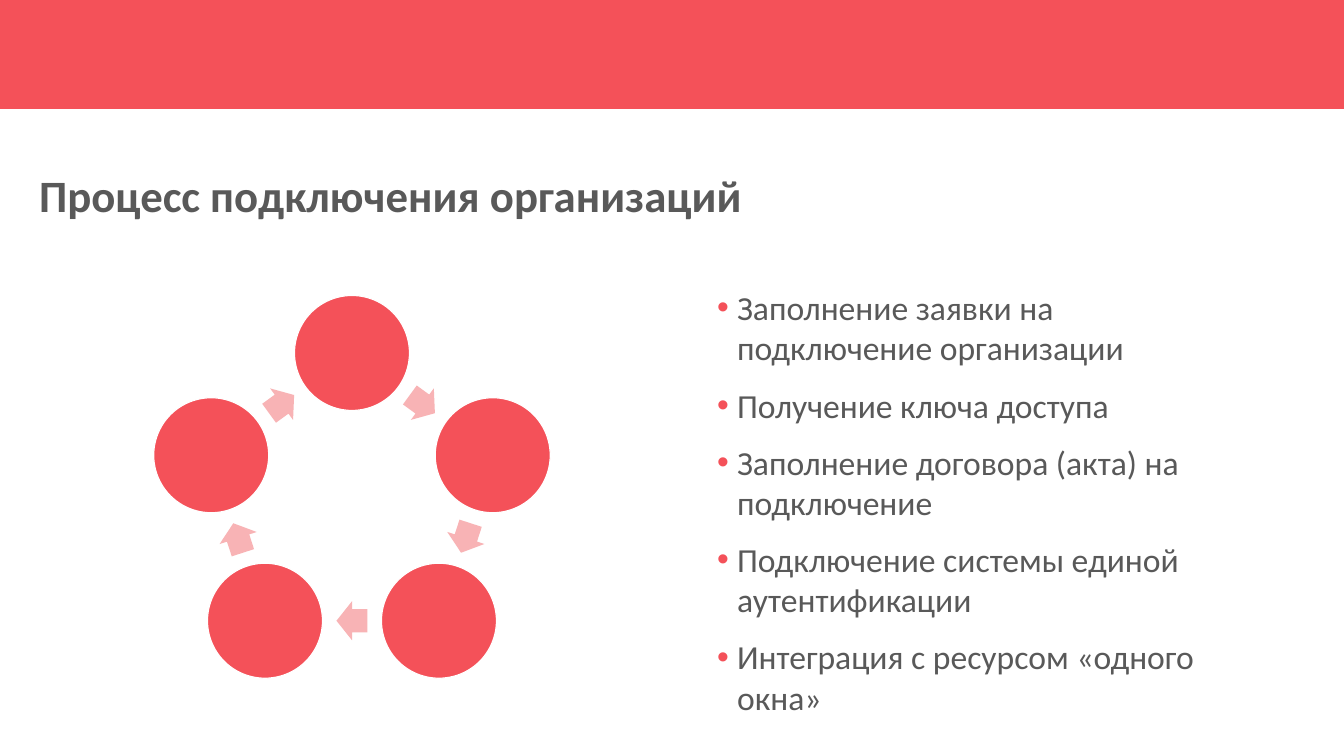
from dataclasses import dataclass
from math import cos, pi, radians, sin

from lxml.etree import SubElement
from pptx import Presentation
from pptx.dml.color import RGBColor
from pptx.enum.shapes import MSO_SHAPE as Preset
from pptx.enum.text import MSO_ANCHOR as Anchor, MSO_AUTO_SIZE as AutoSize, PP_ALIGN as Align
from pptx.oxml.ns import qn
from pptx.util import Pt

# Content
TITLE = "Процесс подключения организаций"
STEPS = [
    "Заполнение заявки на подключение организации",
    "Получение ключа доступа",
    "Заполнение договора (акта) на подключение",
    "Подключение системы единой аутентификации",
    "Интеграция с ресурсом «одного окна»",
]

# Geometry in px: left, top, width, height
SLIDE_SIZE = (1344, 756)
BAND_BOX = (0, 0, 1344, 109)
TITLE_BOX = (29, 148, 1213, 100)
STEPS_BOX = (707, 248, 534, 508)
BULLET_INDENT = 20
RING_CENTER = (352, 501)
RING_RADIUS = 148
CIRCLE_SIZE = (115, 115)
ARROW_SIZE = (31, 39)


@dataclass(frozen=True)
class Theme:
    accent: str = "F45159"
    arrow: str = "F8B3B5"
    text: str = "595959"
    outline: str = "FFFFFF"
    font: str = "Calibri"
    title_size: int = 32
    body_size: int = 24
    paragraph_gap: int = 12
    outline_width: float = 0.85


THEME = Theme()


def px(length):
    return round(length * 914400 / 100.8)


def place(shape, box):
    shape.left, shape.top, shape.width, shape.height = map(px, box)


def prepare_text(placeholder, box):
    place(placeholder, box)
    frame = placeholder.text_frame
    frame.word_wrap = True
    frame.auto_size = AutoSize.NONE
    frame.vertical_anchor = Anchor.MIDDLE
    return frame


def add_text(paragraph, text, size, bold=False):
    paragraph.alignment = Align.LEFT
    run = paragraph.add_run()
    run.text = text
    font = run.font
    font.name, font.size, font.bold = THEME.font, Pt(size), bold
    font.color.rgb = RGBColor.from_string(THEME.text)


def add_bullet(paragraph):
    properties = paragraph._p.get_or_add_pPr()
    properties.set("marL", str(px(BULLET_INDENT)))
    properties.set("indent", str(-px(BULLET_INDENT)))
    color = SubElement(properties, qn("a:buClr"))
    SubElement(color, qn("a:srgbClr"), val=THEME.accent)
    SubElement(properties, qn("a:buFont"), typeface="Arial")
    SubElement(properties, qn("a:buChar"), char="•")


def add_filled(shapes, preset, box, color):
    shape = shapes.add_shape(preset, *map(px, box))
    shape.shadow.inherit = False
    shape.fill.solid()
    shape.fill.fore_color.rgb = RGBColor.from_string(color)
    shape.line.fill.background()
    return shape


def ring_box(radius, angle, size):
    """Box of the given size centred on the ring, clockwise from the top."""
    width, height = size
    x = RING_CENTER[0] + radius * sin(radians(angle))
    y = RING_CENTER[1] - radius * cos(radians(angle))
    return x - width / 2, y - height / 2, width, height


def add_cycle(shapes, count):
    step = 360 / count
    arrow_radius = RING_RADIUS * cos(pi / count)
    for index in range(count):
        angle = index * step
        circle = add_filled(shapes, Preset.OVAL, ring_box(RING_RADIUS, angle, CIRCLE_SIZE), THEME.accent)
        circle.line.color.rgb = RGBColor.from_string(THEME.outline)
        circle.line.width = Pt(THEME.outline_width)

        middle = angle + step / 2
        arrow = add_filled(shapes, Preset.RIGHT_ARROW, ring_box(arrow_radius, middle, ARROW_SIZE), THEME.arrow)
        arrow.adjustments[0], arrow.adjustments[1] = 0.6, 0.5
        arrow.rotation = middle


def main():
    presentation = Presentation()
    presentation.slide_width, presentation.slide_height = map(px, SLIDE_SIZE)
    slide = presentation.slides.add_slide(presentation.slide_layouts[1])
    title, body = slide.placeholders

    # Header band
    add_filled(slide.shapes, Preset.RECTANGLE, BAND_BOX, THEME.accent)

    # Title
    heading = prepare_text(title, TITLE_BOX).paragraphs[0]
    heading.line_spacing = 0.9
    add_text(heading, TITLE, THEME.title_size, bold=True)

    # List of steps
    frame = prepare_text(body, STEPS_BOX)
    for index, step in enumerate(STEPS):
        paragraph = frame.add_paragraph() if index else frame.paragraphs[0]
        add_bullet(paragraph)
        paragraph.space_before = Pt(THEME.paragraph_gap if index else 0)
        add_text(paragraph, step, THEME.body_size)

    # Cycle diagram
    add_cycle(slide.shapes, len(STEPS))

    presentation.save("out.pptx")


if __name__ == "__main__":
    main()
